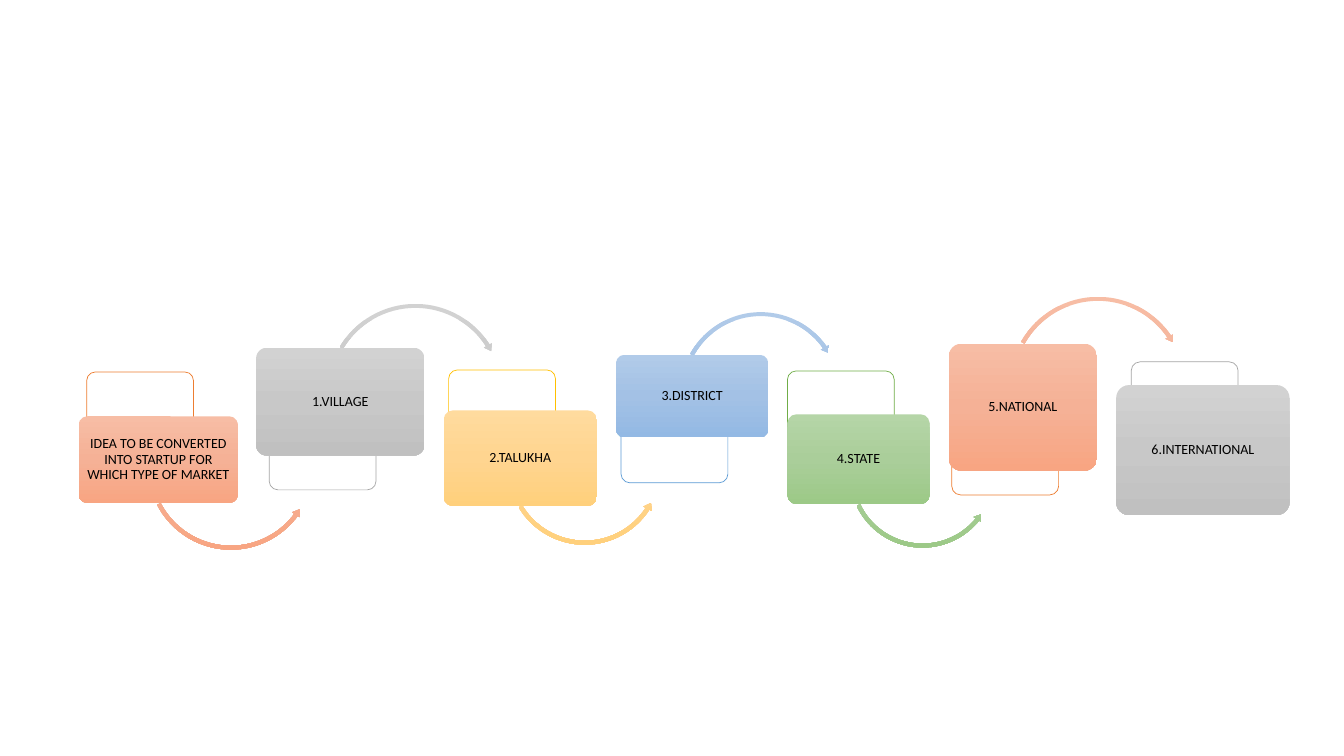
from copy import deepcopy
from lxml.etree import SubElement
from pptx import Presentation
from pptx.dml.color import RGBColor
from pptx.enum.shapes import MSO_SHAPE
from pptx.enum.text import MSO_ANCHOR, PP_ALIGN
from pptx.oxml.ns import qn
from pptx.util import Pt

SCALE = 9144
BLACK = RGBColor(0, 0, 0)
WHITE = RGBColor(255, 255, 255)
# line colour, then the three stops of the gradient
ORANGE = [RGBColor.from_string(c) for c in ("ED7D31", "F7BDA5", "F5B196", "F8A582")]
GRAY = [RGBColor.from_string(c) for c in ("A5A5A5", "D2D2D2", "C8C8C8", "C0C0C0")]
GOLD = [RGBColor.from_string(c) for c in ("FFC000", "FFDB9E", "FFD590", "FFD07C")]
BLUE = [RGBColor.from_string(c) for c in ("5B9BD5", "B1CBE9", "A3C1E5", "93B9E4")]
GREEN = [RGBColor.from_string(c) for c in ("70AD47", "B5D5A7", "AACE9A", "9CC987")]

# label, tones, ghost corner, card box
STEPS = [
    ("IDEA TO BE CONVERTED INTO STARTUP FOR WHICH TYPE OF MARKET",
     ORANGE, (86, 369), (78, 413, 158, 86)),
    ("1.VILLAGE", GRAY, (267, 399), (254, 345, 167, 107)),
    ("2.TALUKHA", GOLD, (445, 367), (440, 407, 152, 95)),
    ("3.DISTRICT", BLUE, (616, 392), (611, 352, 151, 82)),
    ("4.STATE", GREEN, (781, 368), (781, 411, 141, 89)),
    ("5.NATIONAL", ORANGE, (944, 404), (941, 341, 147, 126)),
    ("6.INTERNATIONAL", GRAY, (1122, 359), (1107, 382, 172, 129)),
]
# left, top, side; band and head in thousandths; tip, end and start in degrees
ARROWS = [
    ((144, 378, 170), 23, 27, (4.64, 36.39, 152.57)),
    ((322, 299, 180), 22, 25, (4.36, 327.24, 210.79)),
    ((501, 385, 158), 25, 29, (5.02, 33.13, 148.94)),
    ((672, 307, 165), 24, 28, (4.78, 324.83, 208.8)),
    ((840, 396, 150), 26, 31, (5.31, 39.21, 154.72)),
    ((999, 292, 180), 22, 25, (4.35, 325.79, 209.33)),
]


def px(n):
    return n * SCALE


def write(frame, text, size=10, color=BLACK, font="Calibri", align=PP_ALIGN.CENTER):
    frame.word_wrap = True
    frame.vertical_anchor = MSO_ANCHOR.MIDDLE
    frame.margin_left = frame.margin_right = px(2)
    frame.margin_top = frame.margin_bottom = px(1)
    par = frame.paragraphs[0]
    par.alignment = align
    par.line_spacing = 0.9
    run = par.add_run()
    run.text = text
    run.font.size = Pt(size)
    run.font.name = font
    run.font.color.rgb = color


class Deck:
    def __init__(self):
        self.show = Presentation()
        self.show.slide_width, self.show.slide_height = px(1333), px(750)
        self.slide = self.show.slides.add_slide(self.show.slide_layouts[6])

    def shape(self, kind, box, adj):
        item = self.slide.shapes.add_shape(kind, *map(px, box))
        item.shadow.inherit = False
        for i, val in enumerate(adj):
            item.adjustments[i] = val
        return item

    def shade(self, item, tones):
        item.line.fill.background()
        item.fill.gradient()
        item.fill.gradient_angle = 270
        stops = item.element.xpath(".//a:gsLst")[0]
        stops.insert(1, deepcopy(stops[0]))
        for stop, spot, tone in zip(item.fill.gradient_stops, (0, 0.5, 1), tones[1:]):
            stop.position = spot
            stop.color.rgb = tone

    def ghost(self, spot, tones):
        item = self.shape(MSO_SHAPE.ROUNDED_RECTANGLE, (*spot, 106, 87), [0.1])
        item.fill.solid()
        item.fill.fore_color.rgb = WHITE
        tint = item.element.xpath("./p:spPr/a:solidFill/a:srgbClr")[0]
        SubElement(tint, qn("a:alpha")).set("val", "90000")
        item.line.color.rgb = tones[0]
        item.line.width = Pt(0.5)

    def arrow(self, kind, box, band, head, turns, tones):
        left, top, side = box
        adj = [band / 1000, *(turn * 0.6 for turn in turns), head / 1000]
        self.shade(self.shape(kind, (left, top, side, side), adj), tones)

    def card(self, box, text, tones):
        item = self.shape(MSO_SHAPE.ROUNDED_RECTANGLE, box, [0.1])
        self.shade(item, tones)
        write(item.text_frame, text)


def main():
    deck = Deck()
    kinds = (MSO_SHAPE.LEFT_CIRCULAR_ARROW, MSO_SHAPE.CIRCULAR_ARROW)
    for i, (text, tones, spot, box) in enumerate(STEPS):
        deck.ghost(spot, tones)
        if i < len(ARROWS):
            deck.arrow(kinds[i % 2], *ARROWS[i], tones)
        deck.card(box, text, tones)
    deck.show.save("out.pptx")


if __name__ == "__main__":
    main()
